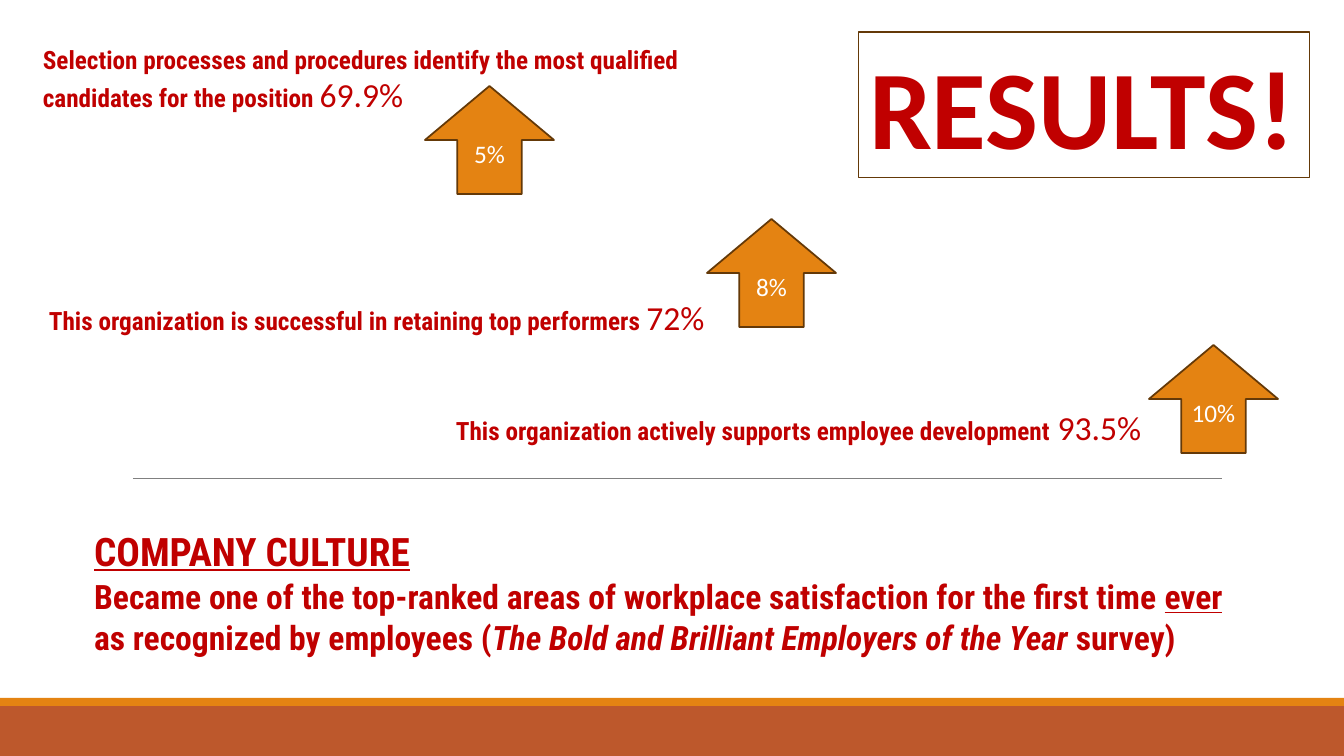
from dataclasses import dataclass

import lxml.etree
import pptx
import pptx.dml.color
import pptx.enum.shapes
import pptx.enum.text
import pptx.oxml.ns
import pptx.util

EMU_PER_PX = 914400 / 100.8
COLORS = {
    "red": "C00000",
    "orange": "E48312",
    "rust": "BD582C",
    "brown": "643908",
    "grey": "808080",
    "white": "FFFFFF",
}
HEADING_FONT = "Roboto Condensed"
FIGURE_FONT = "Calibri"
ARROW_SIZE = (129, 108)
SHAPES = pptx.enum.shapes.MSO_SHAPE
ALIGN = pptx.enum.text.PP_ALIGN
ANCHOR = pptx.enum.text.MSO_ANCHOR


@dataclass
class Box:
    left: int
    top: int
    width: int
    height: int


@dataclass
class Style:
    font: str
    size: int
    bold: bool = False
    italic: bool = False
    underline: bool = False
    color: str = "red"


@dataclass
class Band:
    box: Box
    color: str


@dataclass
class Finding:
    statement: str
    score: str
    box: Box
    gain: str
    arrow_left: int
    arrow_top: int


STATEMENT = Style(HEADING_FONT, 18, bold=True)
SCORE = Style(FIGURE_FONT, 24)
GAIN = Style(FIGURE_FONT, 18, color="white")
HEADLINE = Style(FIGURE_FONT, 80, bold=True)
CULTURE_HEADING = Style(HEADING_FONT, 28, bold=True, underline=True)
CULTURE = Style(HEADING_FONT, 24, bold=True)
CULTURE_STRESS = Style(HEADING_FONT, 24, bold=True, underline=True)
CULTURE_SURVEY = Style(HEADING_FONT, 24, bold=True, italic=True)

BANDS = [
    Band(Box(0, 706, 1344, 50), "rust"),
    Band(Box(0, 698, 1344, 8), "orange"),
]
FINDINGS = [
    Finding("Selection processes and procedures identify the most qualified candidates for the position ",
            "69.9%", Box(33, 39, 738, 204), "5%", 425, 86),
    Finding("This organization is successful in retaining top performers ",
            "72%", Box(39, 292, 692, 82), "8%", 707, 219),
    Finding("This organization actively supports employee development",
            " 93.5%", Box(446, 402, 833, 50), "10%", 1149, 345),
]
CULTURE_LINES = [
    [("COMPANY CULTURE", CULTURE_HEADING)],
    [("Became one of the top-ranked areas of workplace satisfaction for the first time ", CULTURE),
     ("ever", CULTURE_STRESS)],
    [("as recognized by employees (", CULTURE),
     ("The Bold and Brilliant Employers of the Year", CULTURE_SURVEY),
     (" survey)", CULTURE)],
]


def px(length: int) -> pptx.util.Emu:
    return pptx.util.Emu(round(length * EMU_PER_PX))


def rgb(name: str) -> pptx.dml.color.RGBColor:
    return pptx.dml.color.RGBColor.from_string(COLORS[name])


def place(box: Box) -> tuple:
    return px(box.left), px(box.top), px(box.width), px(box.height)


def move(placeholder, box: Box) -> None:
    placeholder.left, placeholder.top, placeholder.width, placeholder.height = place(box)


def prepare(frame, anchor=ANCHOR.TOP) -> None:
    frame.word_wrap = True
    frame.auto_size = pptx.enum.text.MSO_AUTO_SIZE.NONE
    frame.vertical_anchor = anchor


def write(paragraph, pieces: list, align=ALIGN.LEFT) -> None:
    paragraph.alignment = align
    for wording, style in pieces:
        run = paragraph.add_run()
        run.text = wording
        run.font.name = style.font
        run.font.size = pptx.util.Pt(style.size)
        run.font.bold = style.bold
        run.font.italic = style.italic
        run.font.underline = style.underline
        run.font.color.rgb = rgb(style.color)


def outline(shape, weight: float) -> None:
    shape.line.color.rgb = rgb("brown")
    shape.line.width = pptx.util.Pt(weight)


def draw_filled(slide, kind, box: Box, color: str):
    shape = slide.shapes.add_shape(kind, *place(box))
    shape.shadow.inherit = False
    shape.fill.solid()
    shape.fill.fore_color.rgb = rgb(color)
    shape.line.fill.background()
    return shape


def draw_divider(slide) -> None:
    divider = slide.shapes.add_connector(
        pptx.enum.shapes.MSO_CONNECTOR.STRAIGHT, px(133), px(478), px(1222), px(478))
    divider.line.color.rgb = rgb("grey")
    divider.line.width = pptx.util.Pt(0.5)
    lxml.etree.SubElement(divider.element.spPr, pptx.oxml.ns.qn("a:effectLst"))


def draw_finding(slide, finding: Finding) -> None:
    statement = slide.shapes.add_textbox(*place(finding.box)).text_frame
    prepare(statement)
    write(statement.paragraphs[0], [(finding.statement, STATEMENT), (finding.score, SCORE)])

    arrow_box = Box(finding.arrow_left, finding.arrow_top, *ARROW_SIZE)
    arrow = draw_filled(slide, SHAPES.UP_ARROW, arrow_box, "orange")
    outline(arrow, 1.25)
    prepare(arrow.text_frame, ANCHOR.MIDDLE)
    write(arrow.text_frame.paragraphs[0], [(finding.gain, GAIN)], ALIGN.CENTER)


def fill_headline(headline) -> None:
    move(headline, Box(859, 32, 451, 146))
    outline(headline, 0.75)
    prepare(headline.text_frame)
    write(headline.text_frame.paragraphs[0], [("RESULTS!", HEADLINE)])


def fill_culture(culture) -> None:
    move(culture, Box(84, 522, 1176, 169))
    frame = culture.text_frame
    prepare(frame)
    for index, pieces in enumerate(CULTURE_LINES):
        paragraph = frame.add_paragraph() if index else frame.paragraphs[0]
        write(paragraph, pieces)
        paragraph.space_before = pptx.util.Pt(1)
        properties = paragraph._p.get_or_add_pPr()
        properties.set("marL", "0")
        properties.set("indent", "0")
        lxml.etree.SubElement(properties, pptx.oxml.ns.qn("a:buNone"))


def main() -> None:
    deck = pptx.Presentation()
    deck.slide_width, deck.slide_height = px(1344), px(756)
    slide = deck.slides.add_slide(deck.slide_layouts[1])
    for band in BANDS:
        draw_filled(slide, SHAPES.RECTANGLE, band.box, band.color)
    draw_divider(slide)
    for finding in FINDINGS:
        draw_finding(slide, finding)
    fill_headline(slide.shapes.title)
    fill_culture(slide.placeholders[1])
    deck.save("out.pptx")


if __name__ == "__main__":
    main()
